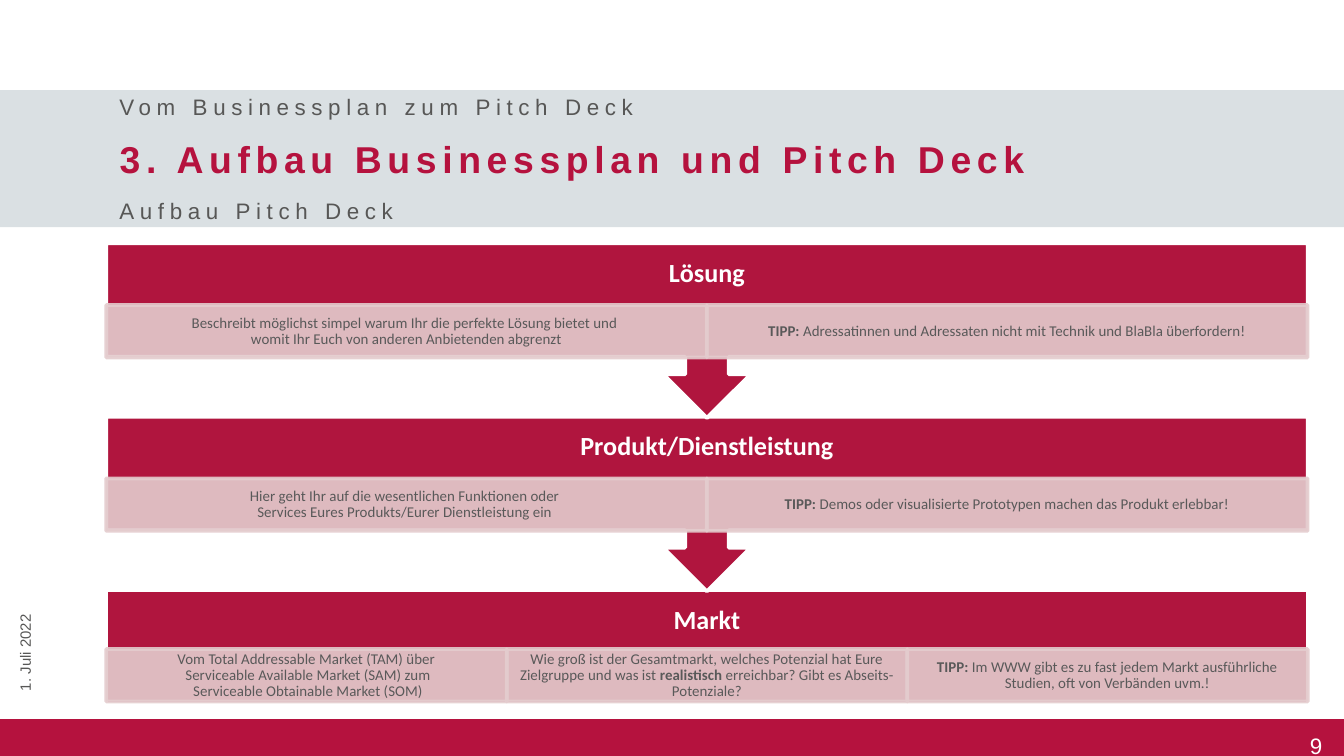
from dataclasses import dataclass
from typing import NamedTuple

from lxml.etree import SubElement
from pptx import Presentation
from pptx.dml.color import RGBColor
from pptx.enum.shapes import MSO_SHAPE
from pptx.enum.text import MSO_ANCHOR, MSO_AUTO_SIZE, PP_ALIGN
from pptx.oxml.ns import qn
from pptx.util import Inches, Pt


@dataclass(frozen=True)
class Theme:
    red: str = "B5123E"
    block_red: str = "B0153E"
    band: str = "DAE0E3"
    cell: str = "E4CCCE"
    cell_alpha: int = 90
    white: str = "FFFFFF"
    grey: str = "575756"
    cell_text: str = "595959"
    heading_font: str = "Arial"
    diagram_font: str = "Calibri"
    title_size: int = 20
    header_size: int = 14
    subtitle_size: int = 12
    small_size: int = 8
    outline: int = 2
    letter_spacing: int = 3


class Box(NamedTuple):
    left: float
    top: float
    width: float
    height: float

    def lengths(self):
        return [Inches(value) for value in self]


class Style(NamedTuple):
    font: str
    size: int
    color: str
    bold: bool = False
    align: PP_ALIGN = PP_ALIGN.LEFT
    spacing: int = 0  # letter spacing in points
    line_spacing: object = None
    insets: tuple = (0.1, 0.05)  # sides, top and bottom
    anchor: MSO_ANCHOR = MSO_ANCHOR.MIDDLE


class Span(NamedTuple):
    text: str
    bold: bool = False


@dataclass(frozen=True)
class Step:
    header: str
    cells: list
    cell_offset: float = 0.46
    has_arrow: bool = True


THEME = Theme()
TITLE = Style(THEME.heading_font, THEME.title_size, THEME.red, True,
              spacing=THEME.letter_spacing)
SUBTITLE = Style(THEME.heading_font, THEME.subtitle_size, THEME.grey,
                 spacing=THEME.letter_spacing)
DATE = Style(THEME.heading_font, THEME.small_size, THEME.grey, anchor=MSO_ANCHOR.TOP)
NUMBER = Style(THEME.heading_font, THEME.subtitle_size, THEME.white,
               align=PP_ALIGN.RIGHT, line_spacing=Pt(28), insets=(0, 0))
HEADER = Style(THEME.diagram_font, THEME.header_size, THEME.white, True,
               PP_ALIGN.CENTER, line_spacing=0.9, insets=(0.11, 0.11))
CELL = Style(THEME.diagram_font, THEME.small_size, THEME.cell_text,
             align=PP_ALIGN.CENTER, line_spacing=0.9, insets=(0.06, 0.01))

LEFT, WIDTH = 0.79, 8.94
FIRST_TOP, STEP_PITCH = 1.81, 1.29
CALLOUT_HEIGHT, LAST_HEIGHT = 1.3, 0.85
HEADER_HEIGHT, CELL_HEIGHT = 0.46, 0.39
TIP = Span("TIPP: ", True)

STEPS = [
    Step("Lösung", [
        [Span("Beschreibt möglichst simpel warum Ihr die perfekte Lösung bietet und \n"
              "womit Ihr Euch von anderen Anbietenden abgrenzt")],
        [TIP, Span("Adressatinnen und Adressaten nicht mit Technik und BlaBla überfordern!")],
    ]),
    Step("Produkt/Dienstleistung", [
        [Span("Hier geht Ihr auf die wesentlichen Funktionen oder \n"
              "Services Eures Produkts/Eurer Dienstleistung ein ")],
        [TIP, Span("Demos oder visualisierte Prototypen machen das Produkt erlebbar!")],
    ]),
    Step("Markt", [
        [Span("Vom Total Addressable Market (TAM) über\n"
              " Serviceable Available Market (SAM) zum\n"
              " Serviceable Obtainable Market (SOM)")],
        [Span("Wie groß ist der Gesamtmarkt, welches Potenzial hat Eure "
              "Zielgruppe und was ist "),
         Span("realistisch", True),
         Span(" erreichbar? Gibt es Abseits-Potenziale?")],
        [TIP, Span("Im WWW gibt es zu fast jedem Markt ausführliche Studien, "
                   "oft von Verbänden uvm.!")],
    ], cell_offset=0.44, has_arrow=False),
]


def write(shape, spans: list, style: Style) -> None:
    """Fill a shape with one paragraph of styled spans."""
    frame = shape.text_frame
    side, edge = (Inches(value) for value in style.insets)
    settings = {"word_wrap": True, "auto_size": MSO_AUTO_SIZE.NONE,
                "vertical_anchor": style.anchor, "margin_left": side,
                "margin_right": side, "margin_top": edge, "margin_bottom": edge}
    for name, value in settings.items():
        setattr(frame, name, value)
    paragraph = frame.paragraphs[0]
    paragraph.alignment = style.align
    paragraph.line_spacing = style.line_spacing
    for span in spans:
        for index, line in enumerate(span.text.split("\n")):
            if index:
                paragraph.add_line_break()
            run = paragraph.add_run()
            run.text = line
            formats = {"name": style.font, "size": Pt(style.size),
                       "bold": style.bold or span.bold}
            for name, value in formats.items():
                setattr(run.font, name, value)
            run.font.color.rgb = RGBColor.from_string(style.color)
            if style.spacing:
                run.font._element.set("spc", str(style.spacing * 100))


def add_text(slide, box: Box, text: str, style: Style):
    shape = slide.shapes.add_textbox(*box.lengths())
    write(shape, [Span(text)], style)
    return shape


def add_block(slide, box: Box, fill: str, line: str = "", alpha: int = 100,
              kind: MSO_SHAPE = MSO_SHAPE.RECTANGLE):
    shape = slide.shapes.add_shape(kind, *box.lengths())
    shape.shadow.inherit = False
    shape.fill.solid()
    shape.fill.fore_color.rgb = RGBColor.from_string(fill)
    if line:
        shape.line.color.rgb = RGBColor.from_string(line)
        shape.line.width = Pt(THEME.outline)
    else:
        shape.line.fill.background()
    if alpha < 100:
        for color in shape._element.spPr.iter(qn("a:srgbClr")):
            SubElement(color, qn("a:alpha")).set("val", str(alpha * 1000))
    return shape


def add_step(slide, step: Step, top: float) -> None:
    # Red block, ending in a down arrow when another step follows
    kind = MSO_SHAPE.UP_ARROW_CALLOUT if step.has_arrow else MSO_SHAPE.RECTANGLE
    height = CALLOUT_HEIGHT if step.has_arrow else LAST_HEIGHT
    block = add_block(slide, Box(LEFT, top, WIDTH, height), THEME.block_red,
                      THEME.white, kind=kind)
    block.rotation = 180 if step.has_arrow else 0
    add_text(slide, Box(LEFT, top, WIDTH, HEADER_HEIGHT), step.header, HEADER)
    # Equal cells below the header
    width = WIDTH / len(step.cells)
    for column, spans in enumerate(step.cells):
        box = Box(LEFT + column * width, top + step.cell_offset, width, CELL_HEIGHT)
        cell = add_block(slide, box, THEME.cell, THEME.cell, THEME.cell_alpha)
        write(cell, spans, CELL)


def main() -> None:
    # Widescreen page, 16:9
    presentation = Presentation()
    presentation.slide_width = Inches(10)
    presentation.slide_height = Inches(10) * 9 // 16
    slide = presentation.slides.add_slide(presentation.slide_layouts[5])

    # Footer bar, page number and title band
    add_block(slide, Box(0, 5.35, 10, 0.28), THEME.red)
    add_text(slide, Box(8.58, 5.26, 1.26, 0.39), "9", NUMBER)
    add_block(slide, Box(0, 0.67, 10, 1.02), THEME.band)

    # Steps from the bottom up, so each arrow tip lies over the next block
    for row, step in reversed(list(enumerate(STEPS))):
        add_step(slide, step, FIRST_TOP + row * STEP_PITCH)

    # Title, brought in front of the band, with the lines around it
    title = slide.shapes.title
    title.left, title.top, title.width, title.height = Box(LEFT, 0.96, 9.21, 0.44).lengths()
    write(title, [Span("3. Aufbau Businessplan und Pitch Deck")], TITLE)
    slide.shapes._spTree.append(title._element)
    add_text(slide, Box(LEFT, 1.42, 9.21, 0.3), "Aufbau Pitch Deck", SUBTITLE)
    add_text(slide, Box(LEFT, 0.72, 9.21, 0.15), "Vom Businessplan zum Pitch Deck", SUBTITLE)

    # Date along the left edge
    date = add_text(slide, Box(-0.42, 4.51, 1.22, 0.24), "1. Juli 2022", DATE)
    date.rotation = 270

    presentation.save("out.pptx")


if __name__ == "__main__":
    main()
